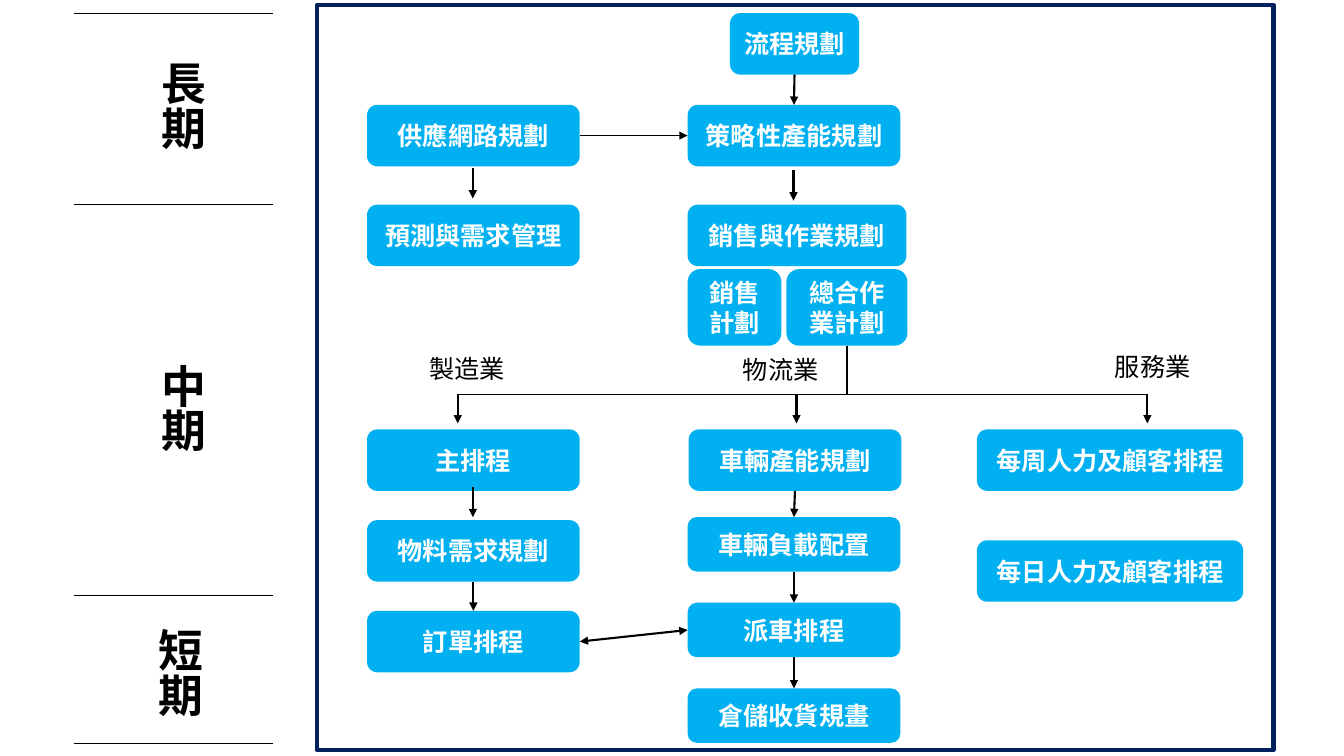
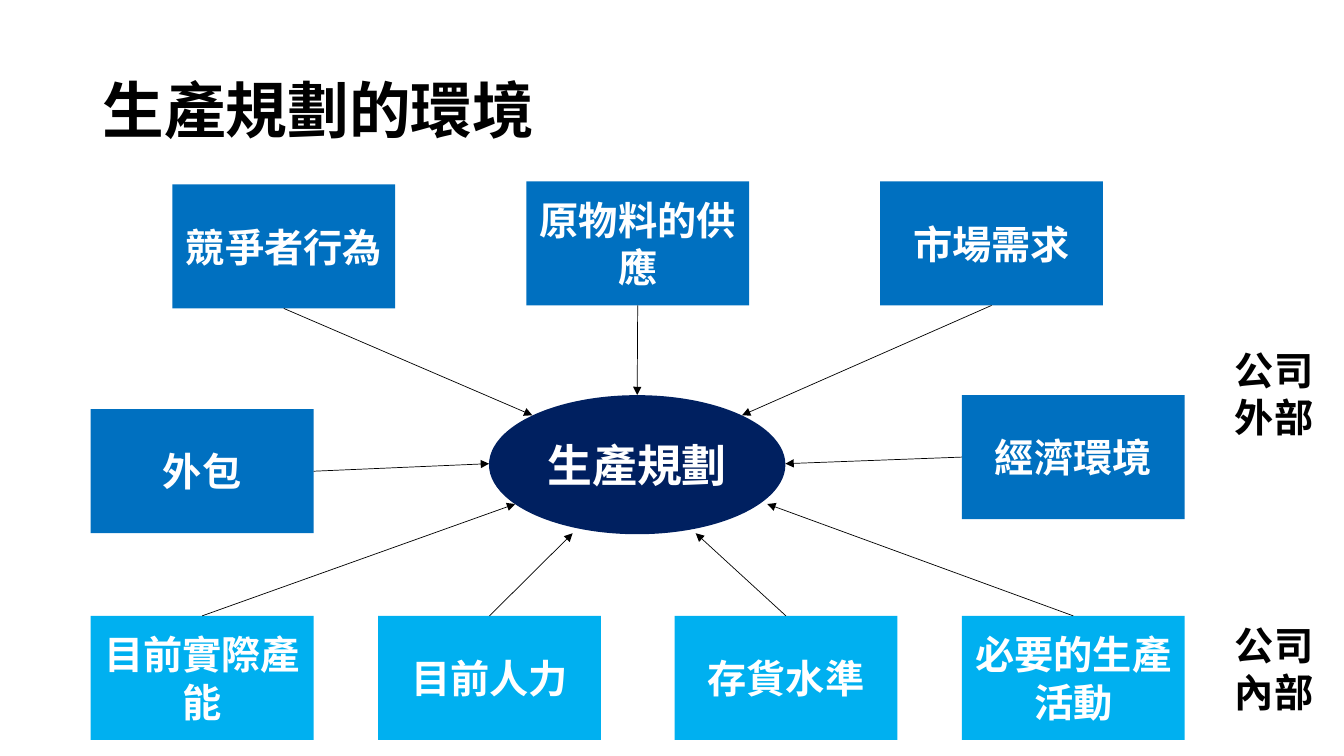
from lxml.etree import SubElement
from pptx import Presentation
from pptx.dml.color import RGBColor
from pptx.enum.shapes import MSO_CONNECTOR, MSO_SHAPE
from pptx.enum.text import MSO_ANCHOR, MSO_AUTO_SIZE, PP_ALIGN
from pptx.oxml.ns import qn
from pptx.util import Pt

PX = 9144
FONT = "Noto Sans CJK SC"
NAVY = RGBColor(0x00, 0x20, 0x60)
BLUE = RGBColor(0x00, 0x70, 0xC0)
SKY = RGBColor(0x00, 0xB0, 0xF0)
WHITE = RGBColor(0xFF, 0xFF, 0xFF)
BLACK = RGBColor(0x00, 0x00, 0x00)
TOP, LEFT, BOTTOM, RIGHT = range(4)
THIN, THICK = Pt(0.5), Pt(1.5)
CENTRED = {"word_wrap": True, "vertical_anchor": MSO_ANCHOR.MIDDLE}
FITTED = {"word_wrap": False, "auto_size": MSO_AUTO_SIZE.SHAPE_TO_FIT_TEXT}


def assign(target, values):
    """Set each attribute of the target from a dict."""
    for name, value in values.items():
        setattr(target, name, value)


def write(tf, lines, size, color, bold=True, frame=None, para=None):
    """Fill a text frame with one paragraph per line."""
    assign(tf, frame or {"word_wrap": True})
    for i, line in enumerate(lines):
        p = tf.add_paragraph() if i else tf.paragraphs[0]
        assign(p, para or {})
        r = p.add_run()
        r.text = line
        assign(r.font, {"name": FONT, "size": Pt(size), "bold": bold})
        r.font.color.rgb = color
        SubElement(r._r.get_or_add_rPr(), qn("a:ea"), typeface=FONT)


class Region:
    """A box on a slide whose parts are placed from its top left corner."""

    def __init__(self, slide, left, top, width, height):
        """Keep the slide and the box."""
        self.shapes = slide.shapes
        self.left, self.top, self.width, self.height = left, top, width, height

    def place(self, x, y):
        """Turn a point of the region into slide EMU."""
        return (self.left + x) * PX, (self.top + y) * PX

    def node(self, text, x, y, w, h, fill=SKY, size=18, kind=MSO_SHAPE.ROUNDED_RECTANGLE):
        """Add a filled shape with centred white text."""
        sp = self.shapes.add_shape(kind, *self.place(x, y), w * PX, h * PX)
        sp.shadow.inherit = False
        sp.fill.solid()
        sp.fill.fore_color.rgb = fill
        sp.line.fill.background()
        write(sp.text_frame, [text], size, WHITE, frame=CENTRED,
              para={"alignment": PP_ALIGN.CENTER})
        return sp

    def border(self, color, width):
        """Outline the whole region."""
        sp = self.shapes.add_shape(MSO_SHAPE.RECTANGLE, *self.place(0, 0),
                                   self.width * PX, self.height * PX)
        sp.shadow.inherit = False
        sp.fill.background()
        sp.line.color.rgb = color
        sp.line.width = width

    def label(self, lines, x, y, w, h, size, **options):
        """Add a black text box."""
        sp = self.shapes.add_textbox(*self.place(x, y), w * PX, h * PX)
        write(sp.text_frame, lines, size, BLACK, **options)
        return sp

    def link(self, begin, end, width=THICK, heads=("tailEnd",)):
        """Draw a line between ends given as a point or as a (shape, side) pair."""
        points = [self.place(0, 0) if hasattr(e[0], "shape_id") else self.place(*e)
                  for e in (begin, end)]
        cxn = self.shapes.add_connector(MSO_CONNECTOR.STRAIGHT, *points[0], *points[1])
        for target, join in ((begin, cxn.begin_connect), (end, cxn.end_connect)):
            if hasattr(target[0], "shape_id"):
                join(*target)
        cxn.line.color.rgb = BLACK
        cxn.line.width = width
        ln = cxn.line._get_or_add_ln()
        for head in heads:
            SubElement(ln, qn(f"a:{head}"), type="triangle")
        SubElement(cxn._element.spPr, qn("a:effectLst"))


def horizons(slide, *box):
    """Draw the planning horizons between horizontal rules."""
    reg = Region(slide, *box)
    for y in (0, 190, 578, reg.height):
        reg.link((0, y), (reg.width, y), THIN, ())
    for text, x, y in (("長期", 65, 38), ("中期", 65, 338), ("短期", 62, 600)):
        sp = reg.label([text], x, y, 74, 130, 32)
        sp.text_frame._txBody.bodyPr.set("vert", "eaVert")


def planning_flow(slide, *box):
    """Draw the framed flow chart of planning activities."""
    reg = Region(slide, *box)
    reg.border(NAVY, Pt(3))
    col1, col2, col3, w, h = 50, 368, 655, 211, 61
    row1, row2, row3, row4 = 99, 198, 262, 421

    process = reg.node("流程規劃", 410, 8, 128, h)
    strategy = reg.node("策略性產能規劃", col2, row1, w, h)
    supply = reg.node("供應網路規劃", col1, row1, w, h)
    reg.node("預測與需求管理", col1, row2, w, h)
    reg.node("銷售與作業規劃", col2, row2, 217, h)
    reg.node("銷售計劃", col2, row3, 93, 76)
    aggregate = reg.node("總合作業計劃", 466, row3, 120, 76)
    _, material, orders = [
        reg.node(text, col1, row4 + 90 * i, w, h)
        for i, text in enumerate(("主排程", "物料需求規劃", "訂單排程"))]
    vehicles = [reg.node("車輛產能規劃", col2 + 1, row4, w, h)]
    vehicles += [reg.node(text, col2, 508 + 85 * i, w, 54)
                 for i, text in enumerate(("車輛負載配置", "派車排程", "倉儲收貨規畫"))]
    for i, text in enumerate(("每周人力及顧客排程", "每日人力及顧客排程")):
        reg.node(text, col3, row4 + 110 * i, 264, h)

    for upper, lower in ((process, strategy), (material, orders),
                         *zip(vehicles, vehicles[1:])):
        reg.link((upper, BOTTOM), (lower, TOP))
    for x, y in ((155, 162), (473, 164), (155, 478)):
        reg.link((x, y), (x, y + 30))
    reg.link((supply, RIGHT), (strategy, LEFT), THIN)
    reg.link((orders, RIGHT), (vehicles[2], LEFT), heads=("headEnd", "tailEnd"))

    bus, drops = 386, (140, 476, 824)
    reg.link((aggregate, BOTTOM), (526, bus), heads=())
    reg.link((drops[0], bus), (drops[-1], bus), THIN, ())
    for x in drops:
        reg.link((x, bus), (x, bus + 29))
    for text, x, y in (("製造業", 102, 341), ("物流業", 413, 342), ("服務業", 782, 339)):
        reg.label([text], x, y, 96, 40, 18, bold=False, frame=FITTED)


def title(slide, text, *box):
    """Write the slide title."""
    reg = Region(slide, *box)
    reg.label([text], 0, 0, reg.width, reg.height, 44, frame=CENTRED,
              para={"line_spacing": 0.9})


def environment(slide, *box):
    """Draw the factors that point at the central plan."""
    reg = Region(slide, *box)
    reg.node("生產規劃", 395, 212, 294, 138, NAVY, 32, MSO_SHAPE.OVAL)
    factors = (
        ("競爭者行為", 81, 3, BLUE, BOTTOM, (438, 232)),
        ("原物料的供應", 432, 0, BLUE, BOTTOM, (542, 212)),
        ("市場需求", 783, 0, BLUE, BOTTOM, (646, 232)),
        ("外包", 0, 226, BLUE, RIGHT, (395, 280)),
        ("經濟環境", 864, 212, BLUE, LEFT, (689, 280)),
        ("目前實際產能", 0, 431, SKY, TOP, (421, 320)),
        ("目前人力", 285, 431, SKY, TOP, (478, 349)),
        ("存貨水準", 579, 431, SKY, TOP, (600, 349)),
        ("必要的生產活動", 864, 431, SKY, TOP, (671, 320)),
    )
    for text, x, y, fill, side, target in factors:
        sp = reg.node(text, x, y, 221, 123, fill, 28, MSO_SHAPE.RECTANGLE)
        reg.link((sp, side), target, THIN)


def scopes(slide, *box):
    """Name the outer and inner factors at the right edge."""
    reg = Region(slide, *box)
    for place, y in (("外部", 0), ("內部", 272)):
        reg.label(["公司", place], 0, y, reg.width, 104, 28, frame=FITTED)


def main():
    """Build both slides and save them."""
    prs = Presentation()
    assign(prs, {"slide_width": 1333 * PX, "slide_height": 750 * PX})
    flow, factors = [prs.slides.add_slide(prs.slide_layouts[6]) for _ in range(2)]
    planning_flow(flow, 314, 5, 949, 739)
    horizons(flow, 73, 13, 198, 724)
    title(factors, "生產規劃的環境", 92, 40, 1150, 145)
    environment(factors, 90, 180, 1085, 554)
    scopes(factors, 1215, 339, 99, 376)
    prs.save("out.pptx")


if __name__ == "__main__":
    main()
